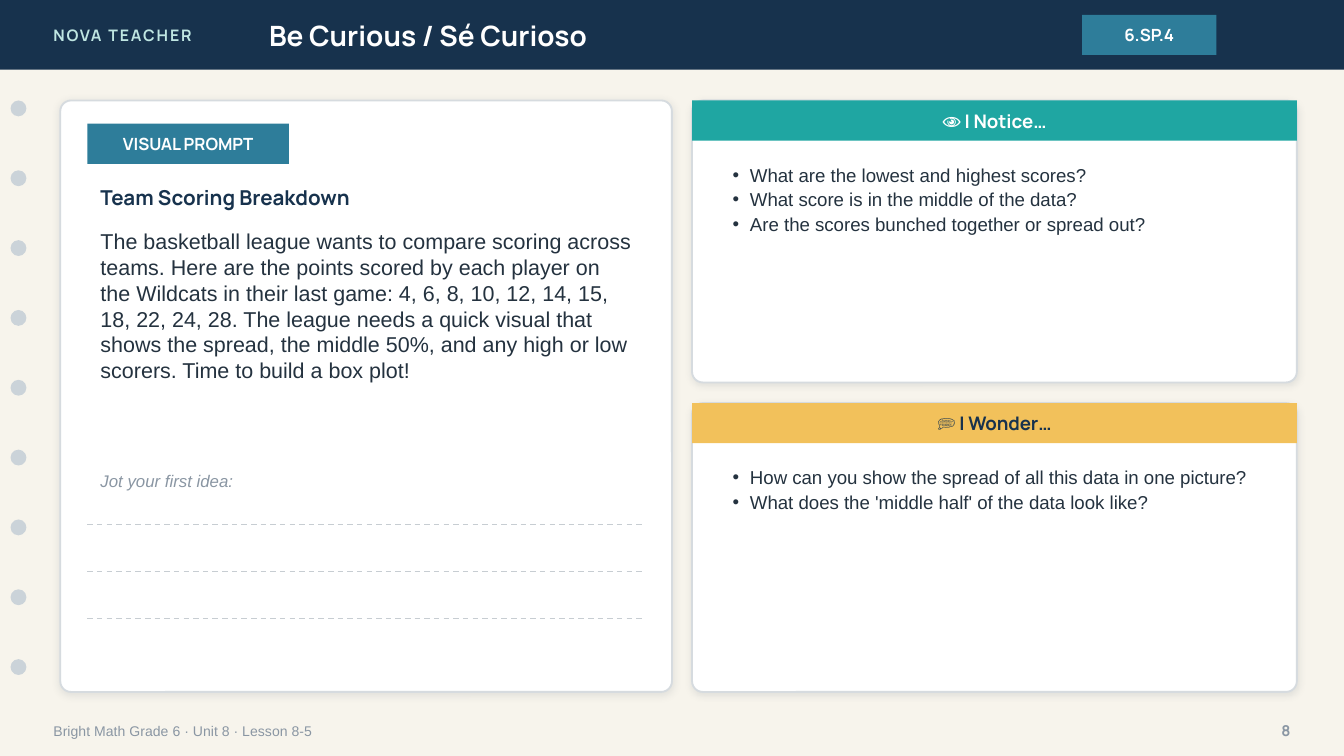
from lxml import etree
from pptx import Presentation
from pptx.dml.color import RGBColor
from pptx.enum import dml, shapes, text
from pptx.oxml import parse_xml
from pptx.oxml.ns import nsdecls, qn
from pptx.util import Cm, Pt

COLORS = {
    "paper": "F7F4EC", "navy": "17324D", "mint": "BFE6E2", "white": "FFFFFF",
    "blue": "2E7D9A", "hole": "CBD3D9", "muted": "8A96A3", "border": "D6DBDF",
    "shadow": "1C2E42", "ink": "24323F", "rule": "C7CDD2",
    "teal": "1FA6A2", "gold": "F2C15B",
}
RGB = {name: RGBColor.from_string(value) for name, value in COLORS.items()}
LEFT, CENTER, RIGHT = text.PP_ALIGN.LEFT, text.PP_ALIGN.CENTER, text.PP_ALIGN.RIGHT
TOP, MIDDLE = text.MSO_ANCHOR.TOP, text.MSO_ANCHOR.MIDDLE

prs = Presentation()
prs.slide_width, prs.slide_height = Cm(25.4), Cm(14.29)
slide = prs.slides.add_slide(prs.slide_layouts[3])
slide.background.fill.solid()
slide.background.fill.fore_color.rgb = RGB["paper"]
title, notice_list, wonder_list = slide.placeholders


def add_block(kind, box, fill, border=None):
    """Add a filled shape without shadow; box is left, top, width, height in cm."""
    block = slide.shapes.add_shape(kind, *map(Cm, box))
    block.shadow.inherit = False
    block.fill.solid()
    block.fill.fore_color.rgb = RGB[fill]
    if border:
        block.line.color.rgb = RGB[border]
        block.line.width = Pt(1)
    else:
        block.line.fill.background()
    return block


def write(holder, words, size, color, font="Manrope", align=LEFT, anchor=MIDDLE, italic=False):
    """Fill a shape with text, one paragraph a line; Manrope is always bold."""
    frame = holder.text_frame
    frame.text = words
    frame.word_wrap = True
    frame.auto_size = text.MSO_AUTO_SIZE.NONE
    frame.vertical_anchor = anchor
    for paragraph in frame.paragraphs:
        paragraph.alignment = align
        for run in paragraph.runs:
            run.font.name = font
            run.font.size = Pt(size)
            run.font.bold = font == "Manrope"
            run.font.italic = italic
            run.font.color.rgb = RGB[color]


# Header band
RECT = shapes.MSO_SHAPE.RECTANGLE
add_block(RECT, (0, 0, 25.4, 1.32), "navy")
series = slide.shapes.add_textbox(Cm(0.76), 0, Cm(6.1), Cm(1.32))
write(series, "NOVA TEACHER", 8.5, "mint")
series.text_frame.paragraphs[0].runs[0].font._element.set("spc", "100")
title.left, title.top, title.width, title.height = Cm(4.83), 0, Cm(14.22), Cm(1.32)
write(title, "Be Curious / Sé Curioso", 15, "white")
slide.shapes._spTree.append(title._element)
standard = add_block(RECT, (20.45, 0.28, 2.54, 0.76), "blue")
write(standard, "6.SP.4", 9, "white", align=CENTER)

# Binder holes
for row in range(9):
    add_block(shapes.MSO_SHAPE.OVAL, (0.2, 1.9 + 1.32 * row, 0.3, 0.3), "hole")

# White cards: left, top, width, height, corner ratio
for *box, corner in [
    (1.14, 1.9, 11.56, 11.18, 0.018),
    (13.08, 1.9, 11.43, 5.33, 0.038),
    (13.08, 7.62, 11.43, 5.46, 0.037),
]:
    card = add_block(shapes.MSO_SHAPE.ROUNDED_RECTANGLE, box, "white", "border")
    card.adjustments[0] = corner
    card._element.spPr.find(qn("a:effectLst")).append(parse_xml(
        f'<a:outerShdw {nsdecls("a")} blurRad="{Pt(4)}" dist="{Pt(1)}" dir="5400000" '
        f'algn="bl" rotWithShape="0"><a:srgbClr val="{COLORS["shadow"]}">'
        '<a:alpha val="10000"/></a:srgbClr></a:outerShdw>'))

# Visual prompt
prompt_tag = add_block(RECT, (1.65, 2.34, 3.81, 0.76), "blue")
write(prompt_tag, "VISUAL PROMPT", 9, "white", align=CENTER)
story = (
    "The basketball league wants to compare scoring across teams. Here are the points "
    "scored by each player on the Wildcats in their last game: 4, 6, 8, 10, 12, 14, 15, "
    "18, 22, 24, 28. The league needs a quick visual that shows the spread, the middle "
    "50%, and any high or low scorers. Time to build a box plot!"
)
for box, words, style in [
    ((1.65, 3.35, 10.54, 0.76), "Team Scoring Breakdown", dict(size=11, color="navy")),
    ((1.65, 4.19, 10.54, 4.32), story,
     dict(size=11.5, color="ink", font="Arial", anchor=TOP)),
    ((1.65, 8.76, 10.16, 0.64), "Jot your first idea:",
     dict(size=9, color="muted", font="Arial", italic=True)),
    ((0.76, 13.46, 17.78, 0.71), "Bright Math Grade 6 · Unit 8 · Lesson 8-5",
     dict(size=7.5, color="muted", font="Arial")),
    ((23.37, 13.46, 1.27, 0.71), "8", dict(size=8, color="muted", align=RIGHT)),
]:
    write(slide.shapes.add_textbox(*map(Cm, box)), words, **style)

for row in range(3):
    y = Cm(9.91 + 0.89 * row)
    writing_line = slide.shapes.add_connector(
        shapes.MSO_CONNECTOR.STRAIGHT, Cm(1.65), y, Cm(12.19), y)
    writing_line.line.color.rgb = RGB["rule"]
    writing_line.line.width = Pt(0.75)
    writing_line.line.dash_style = dml.MSO_LINE.DASH
    etree.SubElement(writing_line._element.spPr, qn("a:effectLst"))

# Notice and wonder panels
for top, heading, fill, color, questions, height, lines in [
    (1.9, "👁 I Notice…", "teal", "white", notice_list, 4.06,
     ["What are the lowest and highest scores?",
      "What score is in the middle of the data?",
      "Are the scores bunched together or spread out?"]),
    (7.62, "💭 I Wonder…", "gold", "navy", wonder_list, 4.19,
     ["How can you show the spread of all this data in one picture?",
      "What does the 'middle half' of the data look like?"]),
]:
    heading_bar = add_block(RECT, (13.08, top, 11.43, 0.76), fill)
    write(heading_bar, heading, 10, color, align=CENTER)
    questions.left, questions.top = Cm(13.59), Cm(top + 1.02)
    questions.width, questions.height = Cm(10.41), Cm(height)
    write(questions, "\n".join(lines), 10, "ink", font="Arial", anchor=TOP)
    for paragraph in questions.text_frame.paragraphs:
        paragraph.line_spacing = 1.1
        paragraph.space_before = Pt(0)
        properties = paragraph._p.get_or_add_pPr()
        properties.set("marL", str(Cm(0.33)))
        properties.set("indent", str(-Cm(0.33)))
        etree.SubElement(properties, qn("a:buFont")).set("typeface", "Arial")
        etree.SubElement(properties, qn("a:buChar")).set("char", "•")
    slide.shapes._spTree.append(questions._element)

prs.save("out.pptx")
